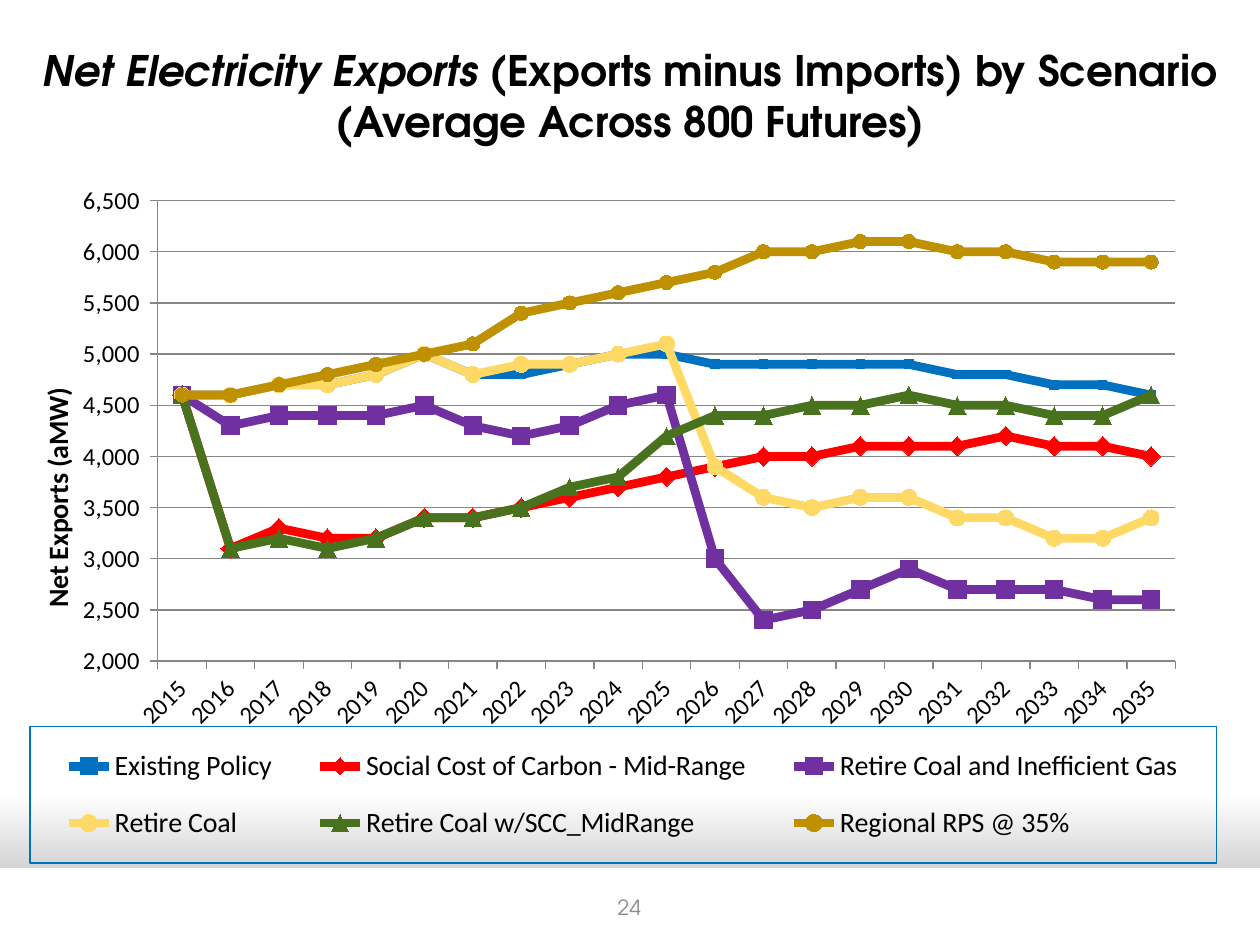
import pptx
import pptx.chart.data
import pptx.dml.color
import pptx.enum.chart
import pptx.enum.shapes
import pptx.enum.text
import pptx.oxml
import pptx.oxml.ns
import pptx.util
from lxml import etree

Inches = pptx.util.Inches
Pt = pptx.util.Pt
RGBColor = pptx.dml.color.RGBColor
qn = pptx.oxml.ns.qn
Marker = pptx.enum.chart.XL_MARKER_STYLE

BLACK = RGBColor(0x00, 0x00, 0x00)
WHITE = RGBColor(0xFF, 0xFF, 0xFF)
SHADE = RGBColor(0xA6, 0xA6, 0xA6)
GRID = RGBColor(0x86, 0x86, 0x86)
PAGE_NUMBER = RGBColor(0x8C, 0x8C, 0x8C)
BLUE = RGBColor(0x00, 0x70, 0xC0)
RED = RGBColor(0xFF, 0x00, 0x00)
PURPLE = RGBColor(0x70, 0x30, 0xA0)
YELLOW = RGBColor(0xFF, 0xD9, 0x66)
GREEN = RGBColor(0x49, 0x72, 0x1E)
GOLD = RGBColor(0xBF, 0x90, 0x00)

YEARS = [str(year) for year in range(2015, 2036)]
SCENARIOS = [
    ("Existing Policy", BLUE, Marker.SQUARE, 5,
     [46, 46, 47, 47, 48, 50, 48, 48, 49, 50, 50, 49, 49, 49, 49, 49, 48, 48, 47, 47, 46]),
    ("Social Cost of Carbon - Mid-Range", RED, Marker.DIAMOND, 11,
     [46, 31, 33, 32, 32, 34, 34, 35, 36, 37, 38, 39, 40, 40, 41, 41, 41, 42, 41, 41, 40]),
    ("Retire Coal and Inefficient Gas", PURPLE, Marker.SQUARE, 10,
     [46, 43, 44, 44, 44, 45, 43, 42, 43, 45, 46, 30, 24, 25, 27, 29, 27, 27, 27, 26, 26]),
    ("Retire Coal", YELLOW, Marker.CIRCLE, 9,
     [46, 46, 47, 47, 48, 50, 48, 49, 49, 50, 51, 39, 36, 35, 36, 36, 34, 34, 32, 32, 34]),
    ("Retire Coal w/SCC_MidRange", GREEN, Marker.TRIANGLE, 10,
     [46, 31, 32, 31, 32, 34, 34, 35, 37, 38, 42, 44, 44, 45, 45, 46, 45, 45, 44, 44, 46]),
    ("Regional RPS @ 35%", GOLD, Marker.CIRCLE, 8,
     [46, 46, 47, 48, 49, 50, 51, 54, 55, 56, 57, 58, 60, 60, 61, 61, 60, 60, 59, 59, 59]),
]


class SlideBuilder:
    heading_font = "TeX Gyre Adventor"
    chart_font = "Calibri"

    def __init__(self, page):
        self.page = page

    def background(self):
        fill = self.page.background.fill
        fill.gradient()
        fill.gradient_angle = 270
        for stop, color, position in zip(fill.gradient_stops, (WHITE, SHADE), (0.84, 1)):
            stop.color.rgb = color
            stop.position = position

    def band(self, left, top, width, height):
        shape = self.page.shapes.add_shape(
            pptx.enum.shapes.MSO_SHAPE.RECTANGLE,
            Inches(left), Inches(top), Inches(width), Inches(height))
        shape.shadow.inherit = False
        shape.fill.solid()
        shape.fill.fore_color.rgb = WHITE
        shape.line.fill.background()

    def span(self, para, text, size, color, bold=False, italic=False):
        span = para.add_run()
        span.text = text
        span.font.name = self.heading_font
        span.font.size = Pt(size)
        span.font.color.rgb = color
        span.font.bold = bold
        span.font.italic = italic

    def centred_paragraph(self, box):
        frame = box.text_frame
        frame.word_wrap = True
        frame.vertical_anchor = pptx.enum.text.MSO_ANCHOR.MIDDLE
        para = frame.paragraphs[0]
        para.alignment = pptx.enum.text.PP_ALIGN.CENTER
        return para

    def title(self, left, top, width, height):
        box = self.page.shapes.title
        box.left, box.top = Inches(left), Inches(top)
        box.width, box.height = Inches(width), Inches(height)
        para = self.centred_paragraph(box)
        box.text_frame.auto_size = pptx.enum.text.MSO_AUTO_SIZE.NONE
        self.span(para, "Net Electricity Exports ", 24, BLACK, True, True)
        self.span(para, "(Exports minus Imports) by Scenario", 24, BLACK, True)
        para.add_line_break()
        self.span(para, "(Average Across 800 Futures)", 24, BLACK, True)

    def page_number(self, text, left, top, width, height):
        box = self.page.shapes.add_textbox(
            Inches(left), Inches(top), Inches(width), Inches(height))
        self.span(self.centred_paragraph(box), text, 12, PAGE_NUMBER)

    def style_font(self, font, size, bold=False):
        font.name = self.chart_font
        font.size = Pt(size)
        font.bold = bold
        font.color.rgb = BLACK

    def place(self, element, index, **settings):
        for old in element.findall(qn("c:layout")):
            element.remove(old)
        layout = etree.Element(qn("c:layout"))
        element.insert(index, layout)
        manual = etree.SubElement(layout, qn("c:manualLayout"))
        for name, value in settings.items():
            etree.SubElement(manual, qn("c:" + name)).set("val", str(value))

    def axis(self, axis):
        axis.major_tick_mark = pptx.enum.chart.XL_TICK_MARK.OUTSIDE
        axis.minor_tick_mark = pptx.enum.chart.XL_TICK_MARK.NONE
        axis.format.line.color.rgb = GRID
        self.style_font(axis.tick_labels.font, 14)

    def value_axis(self, axis):
        self.axis(axis)
        axis.minimum_scale, axis.maximum_scale, axis.major_unit = 2000, 6500, 500
        axis.has_major_gridlines = True
        axis.major_gridlines.format.line.color.rgb = GRID
        axis.tick_labels.number_format = '_(* #,##0_);_(* \\(#,##0\\);_(* "-"??_);_('
        axis.tick_labels.number_format_is_linked = False
        span = axis.axis_title.text_frame.paragraphs[0].add_run()
        span.text = "Net Exports (aMW)"
        self.style_font(span.font, 16, True)
        self.place(axis.axis_title._element, 1, xMode="edge", yMode="edge", x=0.01, y=0.29)

    def legend(self, chart):
        chart.has_legend = True
        legend = chart.legend
        legend.position = pptx.enum.chart.XL_LEGEND_POSITION.BOTTOM
        legend.include_in_layout = False
        self.style_font(legend.font, 16)
        self.place(legend._element, 1, xMode="edge", yMode="edge",
                   x=0.007, y=0.779, w=0.983, h=0.194)
        border = pptx.oxml.parse_xml(
            f'<c:spPr {pptx.oxml.ns.nsdecls("c", "a")}><a:noFill/><a:ln w="9525">'
            f'<a:solidFill><a:srgbClr val="{BLUE}"/></a:solidFill></a:ln></c:spPr>')
        legend._element.find(qn("c:overlay")).addnext(border)

    def line_chart(self, left, top, width, height):
        data = pptx.chart.data.CategoryChartData()
        data.categories = YEARS
        for name, _, _, _, hundreds in SCENARIOS:
            data.add_series(name, [value * 100 for value in hundreds])
        chart = self.page.shapes.add_chart(
            pptx.enum.chart.XL_CHART_TYPE.LINE_MARKERS,
            Inches(left), Inches(top), Inches(width), Inches(height), data).chart
        self.style_font(chart.font, 18)
        chart.has_title = False
        chart.plots[0].vary_by_categories = False
        for series, (_, color, marker, size, _) in zip(chart.plots[0].series, SCENARIOS):
            series.smooth = False
            series.format.line.width = Pt(5)
            series.format.line.color.rgb = color
            series.marker.style = marker
            series.marker.size = size
            series.marker.format.fill.solid()
            series.marker.format.fill.fore_color.rgb = color
            series.marker.format.line.color.rgb = color
        self.axis(chart.category_axis)
        labels = chart.category_axis.tick_labels.font._element.getparent().getparent().getparent()
        labels.find(qn("a:bodyPr")).set("rot", "-2700000")
        self.value_axis(chart.value_axis)
        self.legend(chart)
        self.place(chart._chartSpace.chart.plotArea, 0, layoutTarget="inner",
                   xMode="edge", yMode="edge", x=0.113, y=0.031, w=0.843, h=0.655)


def main():
    deck = pptx.Presentation()
    deck.slide_width, deck.slide_height = Inches(10), Inches(7.5)
    builder = SlideBuilder(deck.slides.add_slide(deck.slide_layouts[5]))
    builder.background()
    builder.band(0, 6.89, 10, 0.61)
    builder.title(0, 0.17, 10, 1.17)
    builder.line_chart(0.17, 1.42, 9.58, 5.58)
    builder.page_number("24", 3.83, 7, 2.33, 0.4)
    deck.save("out.pptx")


if __name__ == "__main__":
    main()
